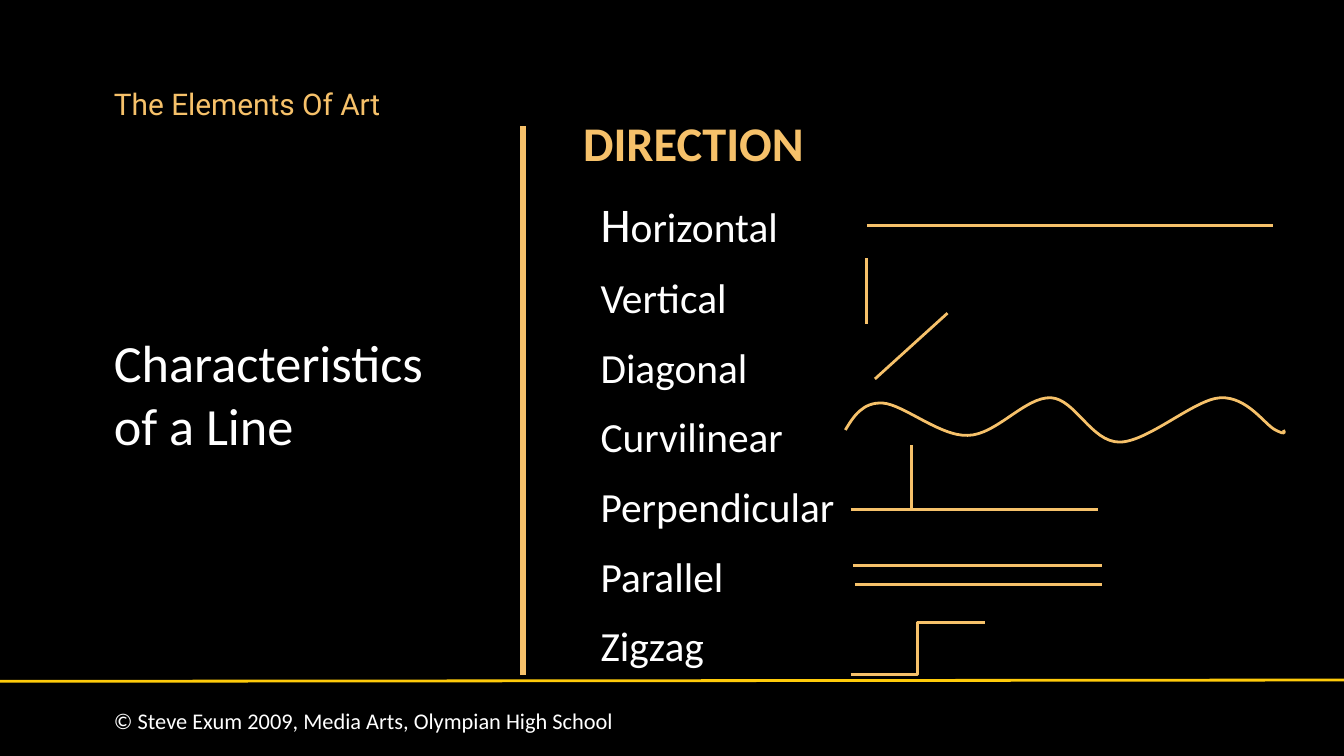
from lxml import etree
from pptx import Presentation
from pptx import util as u
from pptx.dml.color import RGBColor
from pptx.enum import shapes, text
from pptx.oxml import ns

COLORS = {"black": "000000", "white": "FFFFFF", "gold": "F6C16A", "yellow": "FFCB0A"}


class LineSlide:
    def __init__(self, slide, font="Calibri"):
        self.slide = slide
        self.font = font
        background = slide.background.fill
        background.solid()
        background.fore_color.rgb = self.color("black")

    def color(self, name):
        return RGBColor.from_string(COLORS[name])

    def stroke(self, outline, color, width):
        outline.color.rgb = self.color(color)
        outline.width = u.Pt(width)

    def textbox(self, left, top, width, height, inset_top=0.05):
        box = self.slide.shapes.add_textbox(*map(u.Inches, (left, top, width, height)))
        frame = box.text_frame
        frame.word_wrap = True
        frame.vertical_anchor = text.MSO_ANCHOR.TOP
        frame.margin_top = u.Inches(inset_top)
        return frame.paragraphs[0]

    def run(self, paragraph, wording, size, color="white", bold=False, font=None):
        run = paragraph.add_run()
        run.text = wording
        run.font.name = font or self.font
        run.font.size = u.Pt(size)
        run.font.bold = bold
        run.font.color.rgb = self.color(color)

    def line(self, x1, y1, x2, y2, color="gold", width=1.5, elbow=False):
        kind = shapes.MSO_CONNECTOR.ELBOW if elbow else shapes.MSO_CONNECTOR.STRAIGHT
        connector = self.slide.shapes.add_connector(kind, *map(u.Inches, (x1, y1, x2, y2)))
        self.stroke(connector.line, color, width)
        properties = connector._element.find(ns.qn("p:spPr"))
        etree.SubElement(properties, ns.qn("a:effectLst"))

    def curve(self, start, segments):
        builder = self.slide.shapes.build_freeform(*map(u.Inches, start), scale=1.0)
        builder.add_line_segments([tuple(map(u.Inches, s[-2:])) for s in segments], close=False)
        wave = builder.convert_to_shape()
        wave.shadow.inherit = False
        wave.fill.background()
        self.stroke(wave.line, "gold", 1.5)
        for straight, segment in zip(list(wave._element.iter(ns.qn("a:lnTo"))), segments):
            bend = etree.Element(ns.qn("a:cubicBezTo"))
            for x, y in zip(segment[::2], segment[1::2]):
                etree.SubElement(bend, ns.qn("a:pt"), x=str(u.Inches(x) - wave.left),
                                 y=str(u.Inches(y) - wave.top))
            straight.getparent().replace(straight, bend)

    def directions(self, heading, names):
        listing = self.textbox(4.24, 0.62, 4.89, 4.4)
        listing.line_spacing = 1.4
        properties = listing._p.get_or_add_pPr()
        properties.set("marL", str(u.Inches(0.13)))
        properties.set("indent", str(u.Inches(-0.38)))
        self.run(listing, heading, 25.9, "gold", bold=True)
        for index, name in enumerate(names):
            listing.add_line_break()
            if index == 0:
                self.run(listing, name[0], 25.9)
                name = name[1:]
            self.run(listing, name, 22.2)


def main():
    deck = Presentation()
    deck.slide_width = u.Inches(10)
    deck.slide_height = deck.slide_width * 9 // 16
    page = LineSlide(deck.slides.add_slide(deck.slide_layouts[6]))

    page.line(0, 5.07, 10, 5.06, color="yellow")
    copyright_line = page.textbox(0.75, 5.21, 4.97, 0.3)
    page.run(copyright_line, "© Steve Exum 2009, Media Arts, Olympian High School", 12)
    topic = page.textbox(0.75, 0.62, 5.33, 0.56, inset_top=0.02)
    page.run(topic, "The Elements Of Art", 16, "gold", font="Roboto")
    subject = page.textbox(0.75, 2.41, 2.86, 2.62)
    page.run(subject, "Characteristics of a Line", 28)

    page.line(3.89, 0.94, 3.89, 5.02, width=3)
    page.directions("DIRECTION", ["Horizontal", "Vertical", "Diagonal", "Curvilinear",
                                  "Perpendicular", "Parallel", "Zigzag"])

    horizontal = (6.45, 1.68, 9.47, 1.68)
    vertical = (6.45, 2.41, 6.45, 1.92)
    diagonal = (6.51, 2.82, 7.05, 2.33)
    perpendicular = [(6.78, 3.79, 6.78, 3.31), (6.33, 3.79, 8.17, 3.79)]
    parallel = [(6.35, 4.21, 8.2, 4.21), (6.36, 4.35, 8.2, 4.35)]
    for ends in [vertical, horizontal, diagonal]:
        page.line(*ends)
    page.curve((6.29, 3.2), [
        (6.35, 3.1, 6.42, 2.99, 6.57, 3),
        (6.72, 3.01, 7, 3.25, 7.2, 3.24),
        (7.41, 3.24, 7.63, 2.95, 7.82, 2.96),
        (8, 2.97, 8.12, 3.29, 8.33, 3.29),
        (8.54, 3.29, 8.89, 2.97, 9.08, 2.96),
        (9.28, 2.95, 9.41, 3.16, 9.49, 3.2),
        (9.57, 3.24, 9.56, 3.22, 9.55, 3.2),
    ])
    for ends in perpendicular + parallel:
        page.line(*ends)
    page.line(6.33, 5.02, 7.33, 4.63, elbow=True)

    deck.save("out.pptx")


if __name__ == "__main__":
    main()
